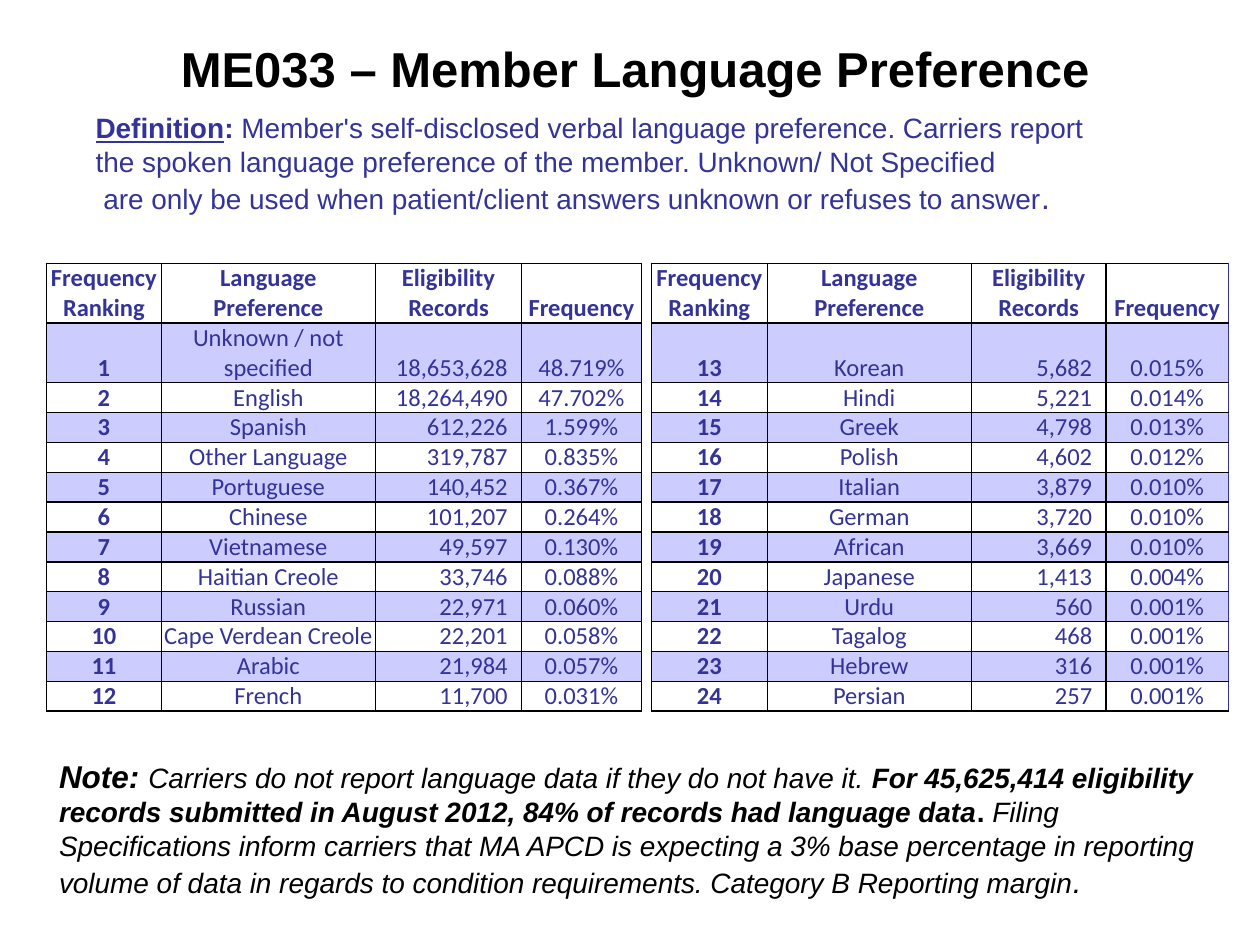
from typing import NamedTuple

from lxml.etree import SubElement
from pptx import Presentation
from pptx.dml.color import RGBColor
from pptx.enum.text import MSO_ANCHOR, MSO_AUTO_SIZE, PP_ALIGN
from pptx.oxml.ns import qn
from pptx.util import Inches, Pt

COLORS = {"black": "000000", "indigo": "333399", "lavender": "CCCCFF"}
COL_WIDTHS = [0.91, 1.7, 1.16, 0.95, 0.08, 0.92, 1.62, 1.07, 0.97]
GAP_COL = 4
ROW_H = 0.23


class Run(NamedTuple):
    text: str
    size: float = 16
    bold: bool = False
    italic: bool = False
    underline: bool = False


class Language(NamedTuple):
    name: str
    records: str
    frequency: str


LANGUAGES = [
    Language("Unknown / not specified", "18,653,628", "48.719%"),
    Language("English", "18,264,490", "47.702%"),
    Language("Spanish", "612,226", "1.599%"),
    Language("Other Language", "319,787", "0.835%"),
    Language("Portuguese", "140,452", "0.367%"),
    Language("Chinese", "101,207", "0.264%"),
    Language("Vietnamese", "49,597", "0.130%"),
    Language("Haitian Creole", "33,746", "0.088%"),
    Language("Russian", "22,971", "0.060%"),
    Language("Cape Verdean Creole", "22,201", "0.058%"),
    Language("Arabic", "21,984", "0.057%"),
    Language("French", "11,700", "0.031%"),
    Language("Korean", "5,682", "0.015%"),
    Language("Hindi", "5,221", "0.014%"),
    Language("Greek", "4,798", "0.013%"),
    Language("Polish", "4,602", "0.012%"),
    Language("Italian", "3,879", "0.010%"),
    Language("German", "3,720", "0.010%"),
    Language("African", "3,669", "0.010%"),
    Language("Japanese", "1,413", "0.004%"),
    Language("Urdu", "560", "0.001%"),
    Language("Tagalog", "468", "0.001%"),
    Language("Hebrew", "316", "0.001%"),
    Language("Persian", "257", "0.001%"),
]
HALF = len(LANGUAGES) // 2

DEFINITION = [
    [Run("Definition", bold=True, underline=True), Run(":", bold=True),
     Run(" Member's self-disclosed verbal language preference. Carriers report")],
    [Run("the spoken language preference of the member. Unknown/ Not Specified")],
    [Run(" are only be used when patient/client answers unknown or refuses to answer"),
     Run(".", 18)],
]
NOTE = [[
    Run("Note: ", 18, bold=True, italic=True),
    Run("Carriers do not report language data if they do not have it. ", italic=True),
    Run("For 45,625,414 eligibility records submitted in August 2012, "
        "84% of records had language data", bold=True, italic=True),
    Run(". ", bold=True),
    Run("Filing Specifications inform carriers that MA APCD is expecting a 3% base "
        "percentage in reporting volume of data in regards to condition requirements. "
        "Category B Reporting margin", italic=True),
    Run(".", 18, italic=True),
]]


def add_run(p, run: Run, color: str, font: str = "Arial") -> None:
    r = p.add_run()
    r.text = run.text
    f = r.font
    f.name, f.size = font, Pt(run.size)
    f.bold, f.italic, f.underline = run.bold, run.italic, run.underline
    f.color.rgb = RGBColor.from_string(COLORS[color])


def add_text(s, box: tuple, paragraphs: list[list[Run]], color: str) -> None:
    tf = s.shapes.add_textbox(*map(Inches, box)).text_frame
    tf.word_wrap = True
    for i, runs in enumerate(paragraphs):
        p = tf.paragraphs[0] if i == 0 else tf.add_paragraph()
        for run in runs:
            add_run(p, run, color)


def set_borders(cell, edges: dict[str, str]) -> None:
    """Give each edge (L, R, T, B) a 1 pt line; call before setting the fill."""
    tc_pr = cell._tc.get_or_add_tcPr()
    for edge, color in edges.items():
        ln = SubElement(tc_pr, qn(f"a:ln{edge}"), w=str(Pt(1)))
        if color:
            fill = SubElement(ln, qn("a:solidFill"))
            SubElement(fill, qn("a:srgbClr"), val=COLORS[color])
        else:
            SubElement(ln, qn("a:noFill"))


def format_cell(cell, row: int, col: int) -> None:
    cell.margin_left = cell.margin_right = 0
    cell.margin_top = cell.margin_bottom = 0
    cell.vertical_anchor = MSO_ANCHOR.BOTTOM
    is_gap = col == GAP_COL
    is_last = col == len(COL_WIDTHS) - 1
    outer = "" if is_gap else "black"
    set_borders(cell, {"L": "black", "R": "indigo" if is_last else "black",
                       "T": outer, "B": outer})
    if row % 2 and not is_gap:
        cell.fill.solid()
        cell.fill.fore_color.rgb = RGBColor.from_string(COLORS["lavender"])
    else:
        cell.fill.background()


def write_cell(cell, text: str, bold: bool, right: bool) -> None:
    tf = cell.text_frame
    for i, line in enumerate(text.split("\n")):
        p = tf.paragraphs[0] if i == 0 else tf.add_paragraph()
        p.alignment = PP_ALIGN.RIGHT if right else PP_ALIGN.CENTER
        add_run(p, Run(line, 14, bold), "indigo", "Calibri")
    if right:
        cell.margin_right = Inches(0.11)


def header(language_label: str) -> list[str]:
    return ["Frequency Ranking", language_label, "Eligibility Records", "Frequency"]


def add_language_table(s) -> None:
    rows = [header("Language\nPreference") + [""] + header("Language Preference")]
    for i in range(HALF):
        rows.append([str(i + 1), *LANGUAGES[i], "",
                     str(i + 1 + HALF), *LANGUAGES[i + HALF]])
    frame = s.shapes.add_table(len(rows), len(COL_WIDTHS), Inches(0.37), Inches(2.09),
                               Inches(sum(COL_WIDTHS)), Inches(ROW_H * len(rows)))
    table = frame.table
    table.first_row = table.horz_banding = False
    for column, width in zip(table.columns, COL_WIDTHS):
        column.width = Inches(width)
    for i, values in enumerate(rows):
        table.rows[i].height = Inches(ROW_H * 2 if i < 2 else ROW_H)
        for j, value in enumerate(values):
            cell = table.cell(i, j)
            format_cell(cell, i, j)
            if j == GAP_COL:
                p = cell.text_frame.paragraphs[0]
                SubElement(p._p, qn("a:endParaRPr"), sz="1000")
                continue
            field = j % (GAP_COL + 1)
            write_cell(cell, value, bold=i == 0 or field == 0,
                       right=i > 0 and field == 2)


def add_title(s, text: str) -> None:
    title = s.shapes.title
    title.left, title.top = Inches(0.08), Inches(0.24)
    title.width, title.height = Inches(9.92), Inches(0.59)
    tf = title.text_frame
    tf.auto_size = MSO_AUTO_SIZE.NONE
    tf.vertical_anchor = MSO_ANCHOR.MIDDLE
    p = tf.paragraphs[0]
    p.alignment = PP_ALIGN.CENTER
    add_run(p, Run(text, 28, bold=True), "black")


def main() -> None:
    prs = Presentation()
    prs.slide_width, prs.slide_height = Inches(10), Inches(7.5)
    s = prs.slides.add_slide(prs.slide_layouts[5])
    add_title(s, "ME033 – Member Language Preference")
    add_language_table(s)
    add_text(s, (0.37, 5.96, 9.29, 1.54), NOTE, "black")
    add_text(s, (0.66, 0.83, 8.15, 1.2), DEFINITION, "indigo")
    prs.save("out.pptx")


if __name__ == "__main__":
    main()
